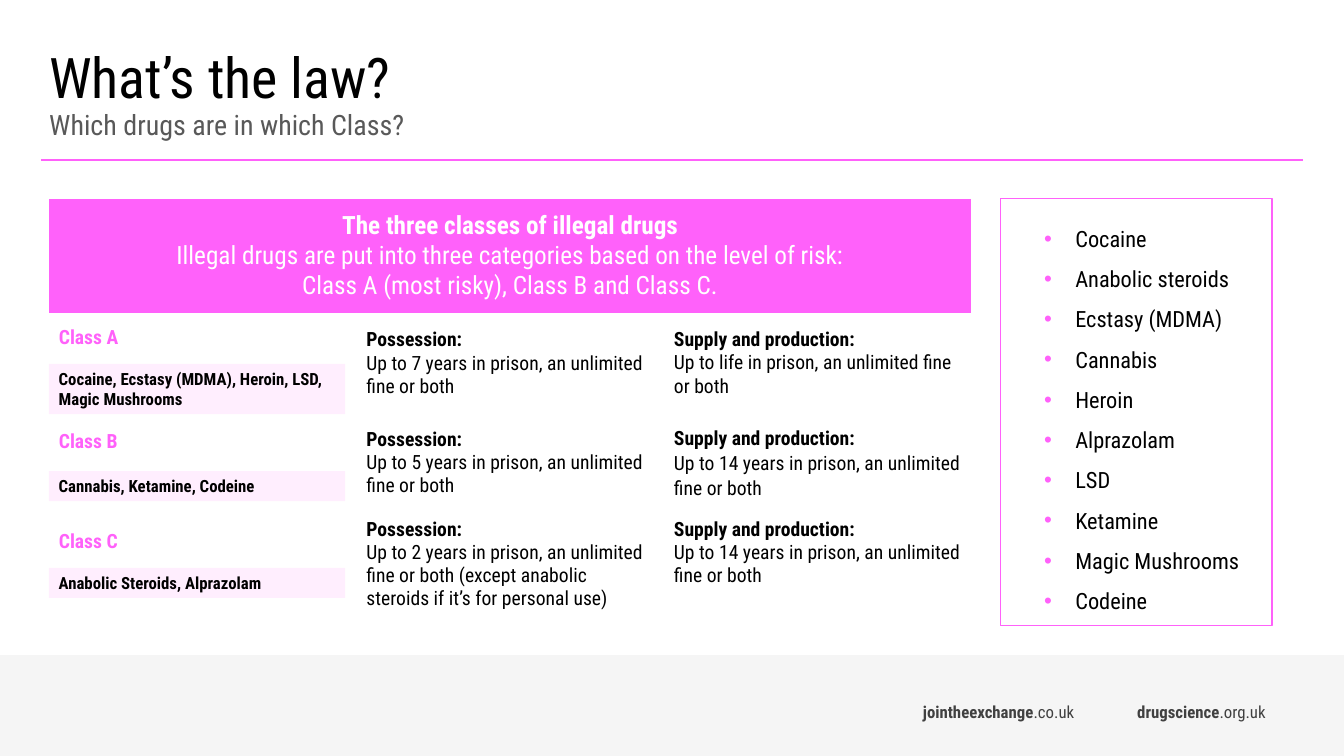
from dataclasses import dataclass

from lxml import etree
from pptx import Presentation
from pptx import util as u
from pptx.dml.color import RGBColor
from pptx.enum import shapes, text
from pptx.oxml import ns

# Theme
FONT = "Roboto Condensed"
PINK = RGBColor(0xFF, 0x61, 0xFA)
WHITE = RGBColor(0xFF, 0xFF, 0xFF)
BLACK = RGBColor(0, 0, 0)
LIGHT_GREY = RGBColor(0xF2, 0xF2, 0xF2)
MID_GREY = RGBColor(0x59, 0x59, 0x59)
DARK_GREY = RGBColor(0x40, 0x40, 0x40)

# Layout in centimetres
SLIDE_WIDTH, SLIDE_HEIGHT = 33.87, 19.05
LEFT, TOP = 1.23, 5.0
COLUMN_WIDTH, BANNER_HEIGHT, ROW_HEIGHT = 7.75, 2.9, 2.51
RULE_TOP = 4.03


@dataclass
class DrugClass:
    name: str
    name_inset: float
    drugs: str
    tag_top: float
    tag_height: float
    possession: str
    supply: str
    supply_spacing: float = 1.0
    supply_bottom: float = 0.13


@dataclass
class WebAddress:
    name: str
    ending: str
    left: float


# Content
CLASSES = [
    DrugClass("Class A", 0.33, "Cocaine, Ecstasy (MDMA), Heroin, LSD, Magic Mushrooms", 9.17, 1.27,
              "Up to 7 years in prison, an unlimited fine or both",
              "Up to life in prison, an unlimited fine or both"),
    DrugClass("Class B", 0.43, "Cannabis, Ketamine, Codeine", 11.87, 0.76,
              "Up to 5 years in prison, an unlimited fine or both",
              "Up to 14 years in prison, an unlimited fine or both", supply_spacing=1.07),
    DrugClass("Class C", 0.43, "Anabolic Steroids, Alprazolam", 14.31, 0.76,
              "Up to 2 years in prison, an unlimited fine or both "
              "(except anabolic steroids if it’s for personal use)",
              "Up to 14 years in prison, an unlimited fine or both", supply_bottom=0.68),
]
DRUGS = ["Cocaine", "Anabolic steroids", "Ecstasy (MDMA)", "Cannabis", "Heroin",
         "Alprazolam", "LSD", "Ketamine", "Magic Mushrooms", "Codeine"]
ADDRESSES = [WebAddress("jointheexchange", ".co.uk", 23.01),
             WebAddress("drugscience", ".org.uk", 28.41)]


# Formatting helpers
def style_font(font, size: float, color: RGBColor, bold: bool = False) -> None:
    font.name, font.size, font.bold = FONT, u.Pt(size), bold
    font.color.rgb = color


def place(shape, left: float, top: float, width: float, height: float) -> None:
    shape.left, shape.top = u.Cm(left), u.Cm(top)
    shape.width, shape.height = u.Cm(width), u.Cm(height)


def prepare_frame(frame, inset: float = 0.13) -> None:
    frame.word_wrap = True
    frame.auto_size = text.MSO_AUTO_SIZE.NONE
    frame.vertical_anchor = text.MSO_ANCHOR.TOP
    frame.margin_left = frame.margin_right = u.Cm(0.25)
    frame.margin_top = frame.margin_bottom = u.Cm(inset)


def add_rectangle(slide, left: float, top: float, width: float, height: float):
    shape = slide.shapes.add_shape(shapes.MSO_SHAPE.RECTANGLE, u.Cm(left), u.Cm(top),
                                   u.Cm(width), u.Cm(height))
    shape.shadow.inherit = False
    shape.line.fill.background()
    return shape


def fill_translucent(shape, color: RGBColor, percent: int) -> None:
    shape.fill.solid()
    shape.fill.fore_color.rgb = color
    color_element = shape._element.spPr.find(".//" + ns.qn("a:srgbClr"))
    etree.SubElement(color_element, ns.qn("a:alpha"), val=str(percent * 1000))


def set_bullet(paragraph, symbol: str = "") -> None:
    properties = paragraph._p.get_or_add_pPr()
    indent = u.Cm(0.79) if symbol else 0
    properties.set("marL", str(indent))
    properties.set("indent", str(-indent))
    if not symbol:
        etree.SubElement(properties, ns.qn("a:buNone"))
        return
    color = etree.SubElement(properties, ns.qn("a:buClr"))
    etree.SubElement(color, ns.qn("a:srgbClr"), val=str(PINK))
    etree.SubElement(properties, ns.qn("a:buFont"), typeface="Arial")
    etree.SubElement(properties, ns.qn("a:buChar"), char=symbol)


def write_heading_and_detail(cell, heading: str, detail: str, size: float, color: RGBColor,
                             alignment=text.PP_ALIGN.LEFT, spacing: float = 1.0) -> None:
    cell.vertical_anchor = text.MSO_ANCHOR.MIDDLE
    cell.text_frame.text = f"{heading}\n{detail}"
    for index, paragraph in enumerate(cell.text_frame.paragraphs):
        paragraph.alignment, paragraph.line_spacing = alignment, spacing
        for run in paragraph.runs:
            style_font(run.font, size, color, bold=index == 0)


# Title, subtitle and rule
def add_heading(slide) -> None:
    title, subtitle = slide.shapes.title, slide.placeholders[1]
    for shape, wording, top, size, color in (
            (title, "What’s the law?", 0.94, 40, BLACK),
            (subtitle, "Which drugs are in which Class?", 2.57, 20, MID_GREY)):
        place(shape, 0.99, top, 28.68, 1.42)
        prepare_frame(shape.text_frame)
        shape.text_frame.text = wording
        paragraph = shape.text_frame.paragraphs[0]
        set_bullet(paragraph)
        paragraph.alignment, paragraph.space_before = text.PP_ALIGN.LEFT, u.Pt(0)
        style_font(paragraph.runs[0].font, size, color)

    rule = slide.shapes.add_connector(shapes.MSO_CONNECTOR.STRAIGHT, u.Cm(1.03), u.Cm(RULE_TOP),
                                      u.Cm(32.84), u.Cm(RULE_TOP))
    rule.line.color.rgb, rule.line.width = PINK, u.Pt(1)
    etree.SubElement(rule._element.spPr, ns.qn("a:effectLst"))


# Table of classes and penalties
def add_class_table(slide) -> None:
    table = slide.shapes.add_table(
        len(CLASSES) + 1, 3, u.Cm(LEFT), u.Cm(TOP), u.Cm(3 * COLUMN_WIDTH),
        u.Cm(BANNER_HEIGHT + len(CLASSES) * ROW_HEIGHT)).table
    for column in table.columns:
        column.width = u.Cm(COLUMN_WIDTH)
    for index, row in enumerate(table.rows):
        row.height = u.Cm(ROW_HEIGHT if index else BANNER_HEIGHT)
        for cell in row.cells:
            cell.fill.background()

    banner = table.cell(0, 0)
    banner.merge(table.cell(0, 2))
    banner.fill.solid()
    banner.fill.fore_color.rgb = PINK
    write_heading_and_detail(
        banner, "The three classes of illegal drugs",
        "Illegal drugs are put into three categories based on the level of risk:\v"
        "Class A (most risky), Class B and Class C.", 18, WHITE, text.PP_ALIGN.CENTER)

    for row_index, drug_class in enumerate(CLASSES, start=1):
        name_cell, possession_cell, supply_cell = table.rows[row_index].cells
        name_cell.margin_top = u.Cm(drug_class.name_inset)
        name_cell.text_frame.text = drug_class.name
        style_font(name_cell.text_frame.paragraphs[0].runs[0].font, 14, PINK, bold=True)
        write_heading_and_detail(possession_cell, "Possession:", drug_class.possession, 14, BLACK)
        supply_cell.margin_bottom = u.Cm(drug_class.supply_bottom)
        write_heading_and_detail(supply_cell, "Supply and production:", drug_class.supply, 14,
                                 BLACK, spacing=drug_class.supply_spacing)


# Tinted tags naming the drugs in each class
def add_drug_tags(slide) -> None:
    for drug_class in CLASSES:
        tag = add_rectangle(slide, LEFT, drug_class.tag_top, 7.47, drug_class.tag_height)
        fill_translucent(tag, PINK, 10)
        prepare_frame(tag.text_frame)
        tag.text_frame.text = drug_class.drugs
        paragraph = tag.text_frame.paragraphs[0]
        paragraph.alignment = text.PP_ALIGN.LEFT
        style_font(paragraph.runs[0].font, 12, BLACK, bold=True)


# Framed list of drugs
def add_drug_list(slide) -> None:
    drug_list = slide.placeholders[2]
    place(drug_list, 26.06, 5.2, 6.58, 11.79)
    prepare_frame(drug_list.text_frame)
    drug_list.text_frame.text = "\n".join(DRUGS)
    for paragraph in drug_list.text_frame.paragraphs:
        set_bullet(paragraph, "•")
        paragraph.line_spacing, paragraph.space_before = 1.5, u.Pt(0)
        style_font(paragraph.runs[0].font, 16, BLACK)
    panel = add_rectangle(slide, 25.21, TOP, 6.85, 10.77)
    panel.fill.background()
    panel.line.color.rgb, panel.line.width = PINK, u.Pt(1)


# Footer band with web addresses
def add_footer(slide) -> None:
    band = add_rectangle(slide, 0, 16.51, SLIDE_WIDTH, 2.54)
    fill_translucent(band, LIGHT_GREY, 75)
    for address in ADDRESSES:
        box = slide.shapes.add_textbox(u.Cm(address.left), u.Cm(17.43), u.Cm(5.2), u.Cm(1.02))
        prepare_frame(box.text_frame, inset=0.25)
        paragraph = box.text_frame.paragraphs[0]
        for wording, bold in ((address.name, True), (address.ending, False)):
            run = paragraph.add_run()
            run.text = wording
            style_font(run.font, 12, DARK_GREY, bold)


def main() -> None:
    presentation = Presentation()
    presentation.slide_width, presentation.slide_height = u.Cm(SLIDE_WIDTH), u.Cm(SLIDE_HEIGHT)
    slide = presentation.slides.add_slide(presentation.slide_layouts.get_by_name("Two Content"))
    for add_part in (add_footer, add_heading, add_class_table, add_drug_tags, add_drug_list):
        add_part(slide)
    presentation.save("out.pptx")


if __name__ == "__main__":
    main()
